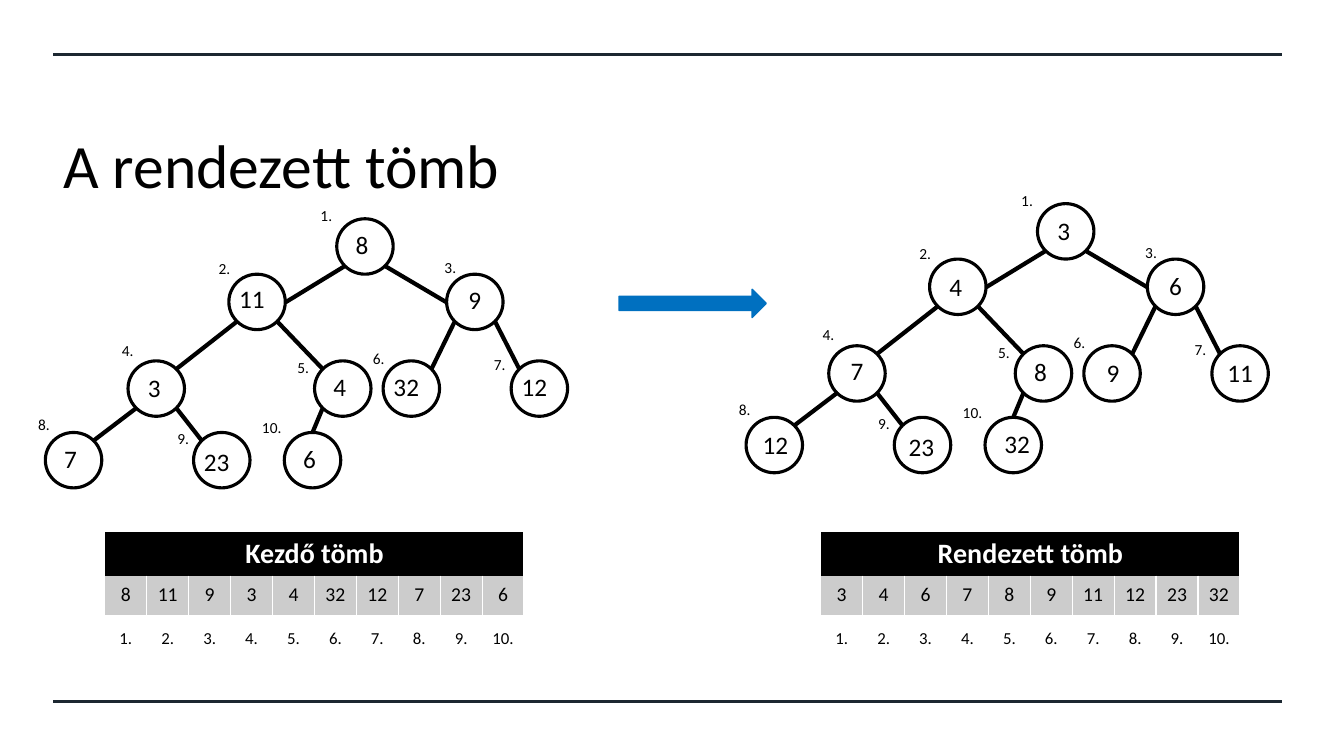
"""Build a slide comparing a starting heap with the sorted one."""
from pptx import Presentation
from pptx.dml.color import RGBColor
from pptx.enum.shapes import MSO_CONNECTOR, MSO_SHAPE
from pptx.enum.text import MSO_ANCHOR, PP_ALIGN
from pptx.oxml.ns import qn
from pptx.oxml.xmlchemy import OxmlElement
from pptx.util import Emu, Pt

EMU_PER_PX = 9144
FONT = "Calibri"
COLORS = {"ink": "000000", "rule": "1C2831", "paper": "FFFFFF", "cell": "CCCCCC", "arrow": "0070C0"}
PLAIN_TABLE_STYLE = "{2D5ABB26-0587-4C30-8999-92F81FD0307C}"

NODE_SIZE = (56, 55)
NODES = [(334, 217), (227, 272), (443, 272), (127, 358), (312, 358),
         (380, 358), (507, 358), (45, 429), (192, 429), (282, 429)]
INDEX_LABELS = [(308, 200), (207, 252), (431, 251), (111, 333), (285, 350),
                (360, 341), (480, 347), (28, 407), (166, 421), (250, 410)]
SITES = {"top": (28, 0), "left": (0, 28), "right": (56, 28), "top left": (8, 8),
         "top right": (48, 8), "bottom left": (8, 47), "bottom right": (48, 47)}
CHILD_SITES = ["right", "left", "top right", "top left", "top right",
               "top left", "top right", "top left", "top"]

START_VALUES = [8, 11, 9, 3, 4, 32, 12, 7, 23, 6]
START_NUDGES = [(-3, -2), (-5, -3), (0, -2), (-2, -1), (-3, -2),
                (-5, -2), (-5, -2), (-3, -2), (-5, 1), (-3, -2)]
SORTED_VALUES = sorted(START_VALUES)
SORTED_NUDGES = [(-2, -1), (-2, 0), (0, -1), (0, -3), (-3, -2),
                 (1, -1), (0, -1), (1, -1), (-1, 1), (4, -2)]


def px(length):
    return Emu(length * EMU_PER_PX)


def color(name):
    return RGBColor.from_string(COLORS[name])


def write_text(frame, text, size=18, ink="ink", bold=False, align=PP_ALIGN.LEFT):
    paragraph = frame.paragraphs[0]
    paragraph.alignment = align
    run = paragraph.add_run()
    run.text = text
    run.font.name = FONT
    run.font.size = Pt(size)
    run.font.bold = bold
    run.font.color.rgb = color(ink)


class HeapSlide:
    """Draw styled elements on one blank slide."""

    def __init__(self, presentation):
        self.slide = presentation.slides.add_slide(presentation.slide_layouts[6])
        self.shapes = self.slide.shapes

    def line(self, start, end, ink="ink", width=3):
        connector = self.shapes.add_connector(
            MSO_CONNECTOR.STRAIGHT, *map(px, (*start, *end)))
        connector.line.color.rgb = color(ink)
        connector.line.width = Pt(width)
        connector._element.spPr.append(OxmlElement("a:effectLst"))

    def shape(self, preset, box, fill=None, ink="ink", width=2.25):
        shape = self.shapes.add_shape(preset, *map(px, box))
        shape.shadow.inherit = False
        if fill:
            shape.fill.solid()
            shape.fill.fore_color.rgb = color(fill)
        else:
            shape.fill.background()
        shape.line.color.rgb = color(ink)
        shape.line.width = Pt(width)
        return shape

    def text(self, box, text, inset=10, anchor=MSO_ANCHOR.MIDDLE, **style):
        frame = self.shapes.add_textbox(*map(px, box)).text_frame
        frame.word_wrap = True
        frame.vertical_anchor = anchor
        frame.margin_left = frame.margin_right = px(inset)
        frame.margin_top = frame.margin_bottom = px(inset // 2)
        write_text(frame, text, **style)

    def tree(self, values, nudges, shift_x=0, shift_y=0):
        nodes = [(x + shift_x, y + shift_y) for x, y in NODES]
        for (x, y), value, (nudge_x, nudge_y) in zip(nodes, values, nudges):
            self.shape(MSO_SHAPE.OVAL, (x, y, *NODE_SIZE))
            self.text((x + nudge_x, y + nudge_y, *NODE_SIZE), str(value),
                      inset=0, align=PP_ALIGN.CENTER)
        for child, site in enumerate(CHILD_SITES, start=1):
            parent = (child - 1) // 2
            side = "bottom left" if child % 2 else "bottom right"
            self.line(self.site(nodes[parent], side), self.site(nodes[child], site))
        for number, (x, y) in enumerate(INDEX_LABELS, start=1):
            width = 49 if number == 10 else 42
            self.text((x + shift_x, y + shift_y, width, 32), f"{number}.",
                      anchor=MSO_ANCHOR.TOP, size=11)

    def site(self, node, name):
        return [corner + offset for corner, offset in zip(node, SITES[name])]

    def cell(self, cell, text, fill=None, **style):
        cell.vertical_anchor = MSO_ANCHOR.MIDDLE
        cell.margin_left = cell.margin_right = px(4)
        cell.margin_top = cell.margin_bottom = px(4)
        write_text(cell.text_frame, text, align=PP_ALIGN.CENTER, **style)
        if not fill:
            cell.fill.background()
            return
        properties = cell._tc.get_or_add_tcPr()
        for tag in ("a:lnL", "a:lnR"):
            border = OxmlElement(tag)
            border.set("w", str(Pt(1)))
            solid = OxmlElement("a:solidFill")
            paint = OxmlElement("a:srgbClr")
            paint.set("val", COLORS["paper"])
            solid.append(paint)
            border.append(solid)
            properties.append(border)
        cell.fill.solid()
        cell.fill.fore_color.rgb = color(fill)

    def array(self, left, title, values):
        heights = (43, 39, 47)
        table = self.shapes.add_table(
            3, len(values), *map(px, (left, 528, 416, sum(heights)))).table
        table.first_row = table.horz_banding = False
        table._tbl.tblPr.find(qn("a:tableStyleId")).text = PLAIN_TABLE_STYLE
        for row, height in zip(table.rows, heights):
            row.height = px(height)
        table.cell(0, 0).merge(table.cell(0, len(values) - 1))
        self.cell(table.cell(0, 0), title, fill="ink", size=20, ink="paper", bold=True)
        for column, value in enumerate(values):
            self.cell(table.cell(1, column), str(value), fill="cell", size=14)
            self.cell(table.cell(2, column), f"{column + 1}.", size=12)


def main():
    presentation = Presentation()
    presentation.slide_width = px(1333)
    presentation.slide_height = px(750)
    heap = HeapSlide(presentation)
    for y in (54, 696):
        heap.line((53, y), (1272, y), ink="rule", width=2.25)
    heap.text((53, 107, 1163, 112), "A rendezett tömb", size=44)
    heap.array(104, "Kezdő tömb", START_VALUES)
    heap.tree(SORTED_VALUES, SORTED_NUDGES, shift_x=695, shift_y=-15)
    heap.tree(START_VALUES, START_NUDGES)
    heap.array(814, "Rendezett tömb", SORTED_VALUES)
    heap.shape(MSO_SHAPE.RIGHT_ARROW, (614, 287, 146, 28), fill="arrow", ink="arrow", width=1)
    presentation.save("out.pptx")


if __name__ == "__main__":
    main()
